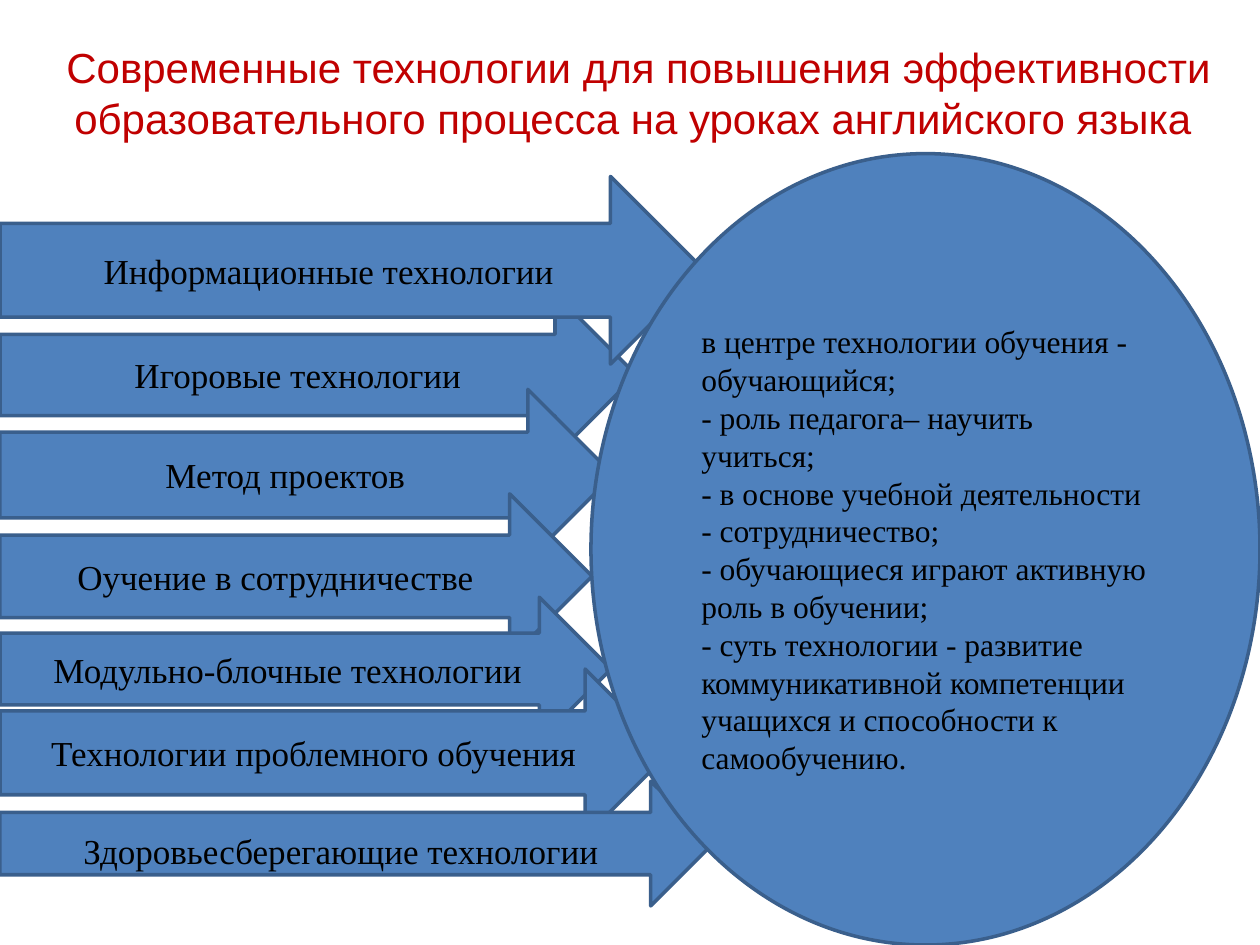
from pptx import Presentation
from pptx.dml.color import RGBColor
from pptx.enum.shapes import MSO_SHAPE
from pptx.enum.text import MSO_ANCHOR, PP_ALIGN
from pptx.util import Pt

ARROW, ELLIPSE = MSO_SHAPE.RIGHT_ARROW, MSO_SHAPE.OVAL
MIDDLE, BOTTOM = MSO_ANCHOR.MIDDLE, MSO_ANCHOR.BOTTOM
LEFT, CENTER = PP_ALIGN.LEFT, PP_ALIGN.CENTER


def rgb(value):
    return RGBColor.from_string(value)


def write(tf, lines, align, anchor, color, **font):
    tf.word_wrap = True
    tf.vertical_anchor = anchor
    for i, line in enumerate(lines):
        p = tf.paragraphs[0] if i == 0 else tf.add_paragraph()
        p.alignment = align
        r = p.add_run()
        r.text = line
        r.font.color.rgb = rgb(color)
        for name, value in font.items():
            setattr(r.font, name, value)


prs = Presentation()
prs.slide_width, prs.slide_height = Pt(720), Pt(540)
s = prs.slides.add_slide(prs.slide_layouts[5])

title = s.shapes.title
box = {"left": 10, "top": 0, "width": 710, "height": 85}
for name, value in box.items():
    setattr(title, name, Pt(value))
write(title.text_frame,
      ["Современные технологии для повышения эффективности "
       "образовательного процесса на уроках английского языка "],
      CENTER, BOTTOM, "C00000", name="Arial", size=Pt(24))

arrows = [
    ("Игоровые технологии", 167.8, 363.6, 92.9),
    ("Информационные технологии", 100.8, 402.5, 107.3),
    ("Метод проектов", 222.5, 350.6, 97.9),
    ("Оучение в сотрудничестве", 282.2, 338.4, 94.3),
    ("Модульно-блочные технологии", 341.3, 349.2, 82.1),
    ("Технологии проблемного обучения", 382.3, 382.3, 95.8),
    ("Здоровьесберегающие технологии", 446.4, 407.5, 71.3),
]
goals = [
    "в центре технологии обучения - обучающийся;",
    "- роль педагога– научить учиться;",
    "- в основе учебной деятельности - сотрудничество;",
    "- обучающиеся играют активную роль в обучении;",
    "- суть технологии - развитие коммуникативной компетенции "
    "учащихся и способности к самообучению.",
]
items = [(ARROW, 0, top, width, height, [text], CENTER, 20)
         for text, top, width, height in arrows]
items.append((ELLIPSE, 337.7, 87.8, 382.3, 452.2, goals, LEFT, 18))

for kind, left, top, width, height, lines, align, size in items:
    sp = s.shapes.add_shape(kind, Pt(left), Pt(top), Pt(width), Pt(height))
    sp.shadow.inherit = False
    sp.fill.solid()
    sp.fill.fore_color.rgb = rgb("4F81BD")
    sp.line.color.rgb = rgb("3A5F8C")
    sp.line.width = Pt(2)
    write(sp.text_frame, lines, align, MIDDLE, "000000",
          name="Times New Roman", size=Pt(size))
    if lines == [arrows[-1][0]]:
        sp.text_frame.margin_top = Pt(11)

prs.save("out.pptx")
